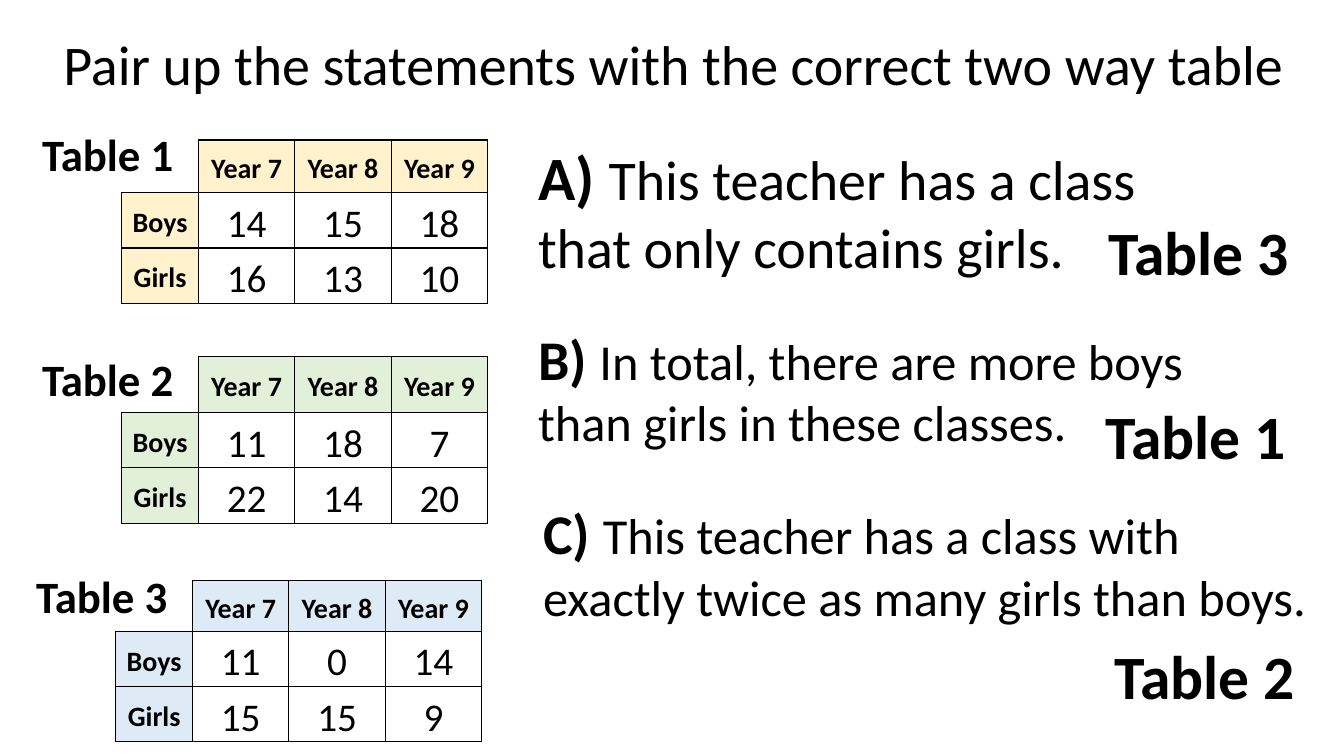
from dataclasses import dataclass

from lxml import etree
from pptx import Presentation
from pptx.dml.color import RGBColor
from pptx.enum.text import MSO_ANCHOR, MSO_AUTO_SIZE, PP_ALIGN
from pptx.oxml.ns import qn
from pptx.slide import Slide
from pptx.table import _Cell
from pptx.text.text import Font, _Paragraph
from pptx.util import Cm, Pt

CENTER = PP_ALIGN.CENTER
LEFT = PP_ALIGN.LEFT
MIDDLE = MSO_ANCHOR.MIDDLE
TOP = MSO_ANCHOR.TOP
GROW = MSO_AUTO_SIZE.SHAPE_TO_FIT_TEXT

COLOURS = {
    "ink": "000000",
    "yellow": "FFF2CC",
    "green": "E2F0D9",
    "blue": "DEEBF7",
}
FONT = "Calibri"
YEARS = ("Year 7", "Year 8", "Year 9")
GENDERS = ("Boys", "Girls")
GENDER_WIDTH = 1.93
YEAR_WIDTH = 2.43
ALL_SIDES = "LRTB"


@dataclass(frozen=True)
class Label:
    """A one-style text; lengths in centimetres."""
    text: str
    left: float
    top: float
    width: float
    height: float
    size: int
    bold: bool = True
    centred: bool = False


@dataclass(frozen=True)
class Statement:
    letter: str
    text: str
    left: float
    top: float
    width: float
    height: float
    letter_size: int
    text_size: int


@dataclass(frozen=True)
class TwoWayTable:
    left: float
    top: float
    row_height: float
    colour: str
    counts: tuple[tuple[int, ...], ...]


LABELS = (
    Label("Pair up the statements with the correct two way table",
          0.41, 0.61, 33.12, 1.96, 40, bold=False, centred=True),
    Label("Table 1", 0.81, 3.07, 4.24, 1.63, 32),
    Label("Table 2", 0.81, 8.74, 4.24, 1.63, 32),
    Label("Table 3", 0.66, 14.2, 4.24, 1.63, 32),
    Label("Table 3", 27.69, 5.26, 5.38, 2.13, 44),
    Label("Table 1", 27.61, 9.91, 5.28, 2.13, 44),
    Label("Table 2", 27.84, 15.95, 5.23, 2.13, 44),
)
STATEMENTS = (
    Statement("A) ", "This teacher has a class that only contains girls.",
              13.31, 3.38, 16.94, 3.84, 44, 40),
    Statement("B) ", "In total, there are more boys than girls in these classes.",
              13.31, 8.05, 16.94, 3.51, 40, 36),
    Statement("C) ", "This teacher has a class with exactly twice as many girls than boys.",
              13.44, 12.45, 19.84, 3.51, 40, 36),
)
TABLES = (
    TwoWayTable(3.07, 3.53, 1.33, "yellow", ((14, 15, 18), (16, 13, 10))),
    TwoWayTable(3.07, 8.99, 1.4, "green", ((11, 18, 7), (22, 14, 20))),
    TwoWayTable(2.92, 14.63, 1.28, "blue", ((11, 0, 14), (15, 15, 9))),
)


def style_font(font: Font, size: int, bold: bool) -> None:
    font.name = FONT
    font.size = Pt(size)
    font.bold = bold
    font.color.rgb = RGBColor.from_string(COLOURS["ink"])


def add_text_box(slide: Slide, box: Label | Statement, anchor: MSO_ANCHOR) -> _Paragraph:
    """Add a wrapping text box and return its first paragraph."""
    frame = slide.shapes.add_textbox(
        Cm(box.left), Cm(box.top), Cm(box.width), Cm(box.height)).text_frame
    frame.word_wrap = True
    frame.auto_size = GROW
    frame.vertical_anchor = anchor
    return frame.paragraphs[0]


def add_label(slide: Slide, label: Label) -> None:
    paragraph = add_text_box(slide, label, MIDDLE if label.centred else TOP)
    paragraph.text = label.text
    paragraph.alignment = CENTER if label.centred else LEFT
    style_font(paragraph.font, label.size, label.bold)


def add_statement(slide: Slide, statement: Statement) -> None:
    paragraph = add_text_box(slide, statement, TOP)
    for text, size, bold in ((statement.letter, statement.letter_size, True),
                             (statement.text, statement.text_size, False)):
        run = paragraph.add_run()
        run.text = text
        style_font(run.font, size, bold)


def set_borders(cell: _Cell, ruled_sides: str) -> None:
    """Rule the given sides (of LRTB) and clear the others."""
    properties = cell._tc.get_or_add_tcPr()
    for side in ALL_SIDES:
        line = etree.SubElement(properties, qn(f"a:ln{side}"), w=str(Pt(1)))
        if side in ruled_sides:
            fill = etree.SubElement(line, qn("a:solidFill"))
            etree.SubElement(fill, qn("a:srgbClr"), val=COLOURS["ink"])
        else:
            etree.SubElement(line, qn("a:noFill"))


def fill_cell(cell: _Cell, text: str, heading_colour: str | None) -> None:
    """Write a heading on its colour, or a count on no fill."""
    set_borders(cell, ALL_SIDES)
    if heading_colour:
        cell.fill.solid()
        cell.fill.fore_color.rgb = RGBColor.from_string(heading_colour)
    else:
        cell.fill.background()
    cell.vertical_anchor = MIDDLE
    cell.margin_left = cell.margin_right = Cm(0.18)
    cell.margin_top = cell.margin_bottom = 0
    paragraph = cell.text_frame.paragraphs[0]
    paragraph.text = text
    paragraph.alignment = CENTER
    paragraph.line_spacing = 1.15
    style_font(paragraph.font, 20 if heading_colour else 28, bool(heading_colour))


def add_two_way_table(slide: Slide, data: TwoWayTable) -> None:
    row_count, column_count = len(GENDERS) + 1, len(YEARS) + 1
    table = slide.shapes.add_table(
        row_count, column_count, Cm(data.left), Cm(data.top),
        Cm(GENDER_WIDTH + YEAR_WIDTH * len(YEARS)),
        Cm(data.row_height * row_count)).table
    table.first_row = table.horz_banding = False
    for index, column in enumerate(table.columns):
        column.width = Cm(YEAR_WIDTH if index else GENDER_WIDTH)
    for row in table.rows:
        row.height = Cm(data.row_height)

    corner = table.cell(0, 0)
    set_borders(corner, "RB")
    corner.fill.background()
    colour = COLOURS[data.colour]
    for column, year in enumerate(YEARS, 1):
        fill_cell(table.cell(0, column), year, colour)
    for row, (gender, counts) in enumerate(zip(GENDERS, data.counts), 1):
        fill_cell(table.cell(row, 0), gender, colour)
        for column, count in enumerate(counts, 1):
            fill_cell(table.cell(row, column), str(count), None)


def main() -> None:
    presentation = Presentation()
    presentation.slide_width = Cm(33.87)
    presentation.slide_height = Cm(19.05)
    slide = presentation.slides.add_slide(presentation.slide_layouts[6])
    for table in TABLES:
        add_two_way_table(slide, table)
    for label in LABELS:
        add_label(slide, label)
    for statement in STATEMENTS:
        add_statement(slide, statement)
    presentation.save("out.pptx")


if __name__ == "__main__":
    main()
